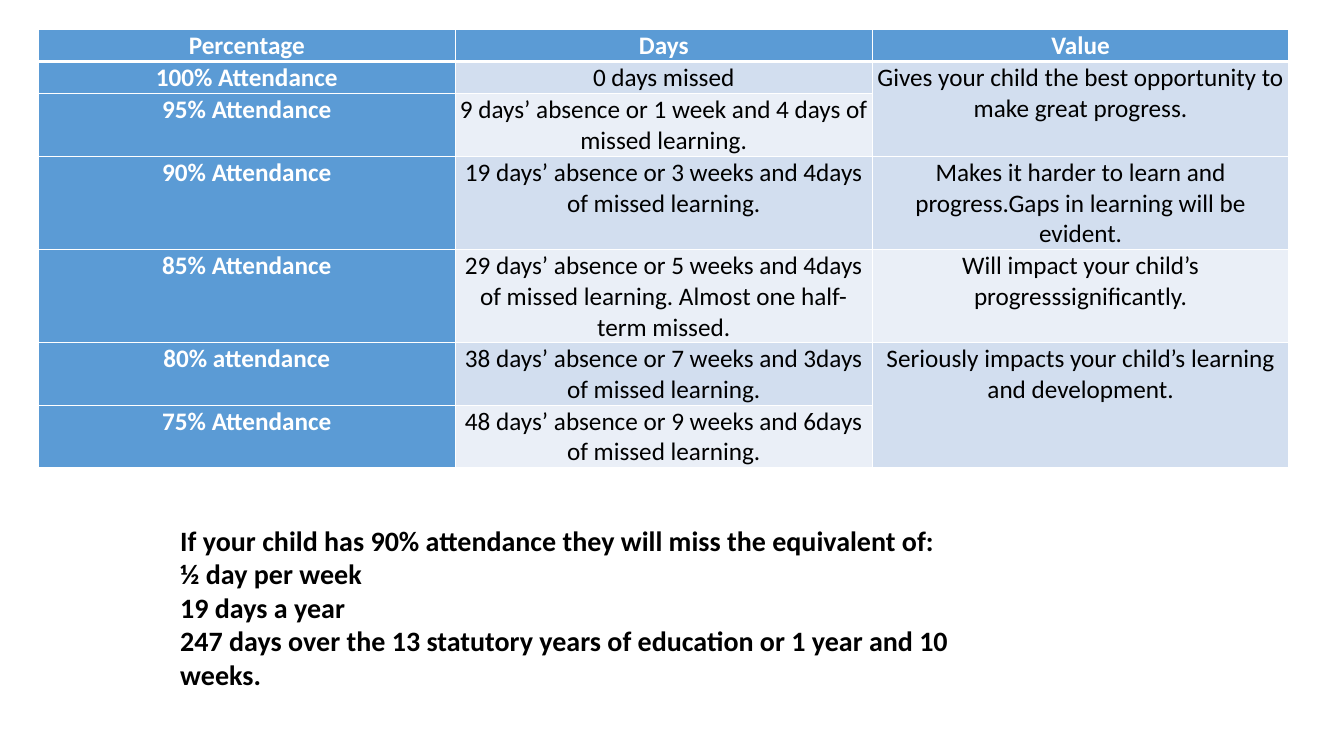
"""Build a slide on what school absence costs a child."""
import dataclasses
import typing

import lxml.etree
import pptx
import pptx.dml.color
import pptx.enum.text
import pptx.oxml.ns
import pptx.util

Pt = pptx.util.Pt
RGB = pptx.dml.color.RGBColor
Align = pptx.enum.text.PP_ALIGN
Format = dict[str, typing.Any]


@dataclasses.dataclass(frozen=True)
class Theme:
    font: str = "Calibri"
    cell: int = 18
    note: int = 20
    white: str = "FFFFFF"
    black: str = "000000"
    blue: str = "5B9BD5"
    bands: tuple[str, str] = ("EAEFF7", "D2DEEF")


@dataclasses.dataclass(frozen=True)
class Row:
    texts: tuple[str, str, str]
    lines: int
    span: int = 1


THEME = Theme()
LEFT, TOP, WIDE = 27.4, 20.9, 297.8
LINE, EXTRA, INSET = 22, 0.6, 0.72
THIN, THICK = 1, 3

ROWS = (
    Row(("Percentage", "Days", "Value"), 1),
    Row(("100% Attendance", "0 days missed",
         "Gives your child the best opportunity to make great progress."), 1, 2),
    Row(("95% Attendance",
         "9 days’ absence or 1 week and 4 days of missed learning.", ""), 2),
    Row(("90% Attendance",
         "19 days’ absence or 3 weeks and 4days of missed learning.",
         "Makes it harder to learn and progress.Gaps in learning will be evident."), 3),
    Row(("85% Attendance",
         "29 days’ absence or 5 weeks and 4days of missed learning. Almost one half-term missed.",
         "Will impact your child’s progresssignificantly."), 3),
    Row(("80% attendance",
         "38 days’ absence or 7 weeks and 3days of missed learning.",
         "Seriously impacts your child’s learning and development."), 2, 2),
    Row(("75% Attendance",
         "48 days’ absence or 9 weeks and 6days of missed learning.", ""), 2),
)

NOTES = (
    "If your child has 90% attendance they will miss the equivalent of:",
    "½ day per week",
    "19 days a year",
    "247 days over the 13 statutory years of education or 1 year and 10 weeks.",
)


def apply(item: typing.Any, form: Format) -> None:
    for name, value in form.items():
        setattr(item, name, value)


def style(font: typing.Any, size: int, color: str, bold: bool) -> None:
    apply(font, {"name": THEME.font, "size": Pt(size), "bold": bold})
    font.color.rgb = RGB.from_string(color)


def border(cell: typing.Any, widths: dict[str, int]) -> None:
    props = cell._tc.get_or_add_tcPr()
    qn = pptx.oxml.ns.qn
    for side, width in widths.items():
        line = lxml.etree.SubElement(props, qn(f"a:ln{side}"), w=str(Pt(width)))
        fill = lxml.etree.SubElement(line, qn("a:solidFill"))
        lxml.etree.SubElement(fill, qn("a:srgbClr"), val=THEME.white)


def draw_cell(cell: typing.Any, text: str, row: int, col: int) -> None:
    head = row == 0 or col == 0
    border(cell, {"L": THIN, "R": THIN,
                  "T": THICK if row == 1 else THIN,
                  "B": THICK if row == 0 else THIN})
    cell.fill.solid()
    cell.fill.fore_color.rgb = RGB.from_string(THEME.blue if head else THEME.bands[row % 2])
    apply(cell, {f"margin_{side}": Pt(INSET) for side in ("left", "top", "right", "bottom")})
    para = cell.text_frame.paragraphs[0]
    para.alignment = Align.CENTER
    style(para.font, THEME.cell, THEME.white if head else THEME.black, head)
    if text:
        run = para.add_run()
        run.text = text
        style(run.font, THEME.cell, THEME.white if head else THEME.black, head)


def draw_table(slide: typing.Any) -> None:
    highs = [row.lines * LINE + EXTRA for row in ROWS]
    table = slide.shapes.add_table(
        len(ROWS), 3, Pt(LEFT), Pt(TOP), Pt(3 * WIDE), Pt(sum(highs))).table
    for part in table.columns:
        part.width = Pt(WIDE)
    for r, row in enumerate(ROWS):
        table.rows[r].height = Pt(highs[r])
        for c, text in enumerate(row.texts):
            draw_cell(table.cell(r, c), text, r, c)
    for r, row in enumerate(ROWS):
        if row.span > 1:
            table.cell(r, 2).merge(table.cell(r + row.span - 1, 2))


def draw_notes(slide: typing.Any) -> None:
    frame = slide.shapes.add_textbox(Pt(121.7), Pt(345.6), Pt(573.8), Pt(152.6)).text_frame
    apply(frame, {"word_wrap": True, "margin_top": Pt(28),
                  "auto_size": pptx.enum.text.MSO_AUTO_SIZE.SHAPE_TO_FIT_TEXT})
    for i, text in enumerate(NOTES):
        para = frame.add_paragraph() if i else frame.paragraphs[0]
        run = para.add_run()
        run.text = text
        style(run.font, THEME.note, THEME.black, True)


def main() -> None:
    deck = pptx.Presentation()
    apply(deck, {"slide_width": Pt(960), "slide_height": Pt(540)})
    slide = deck.slides.add_slide(deck.slide_layouts[6])
    draw_notes(slide)
    draw_table(slide)
    deck.save("out.pptx")


if __name__ == "__main__":
    main()
